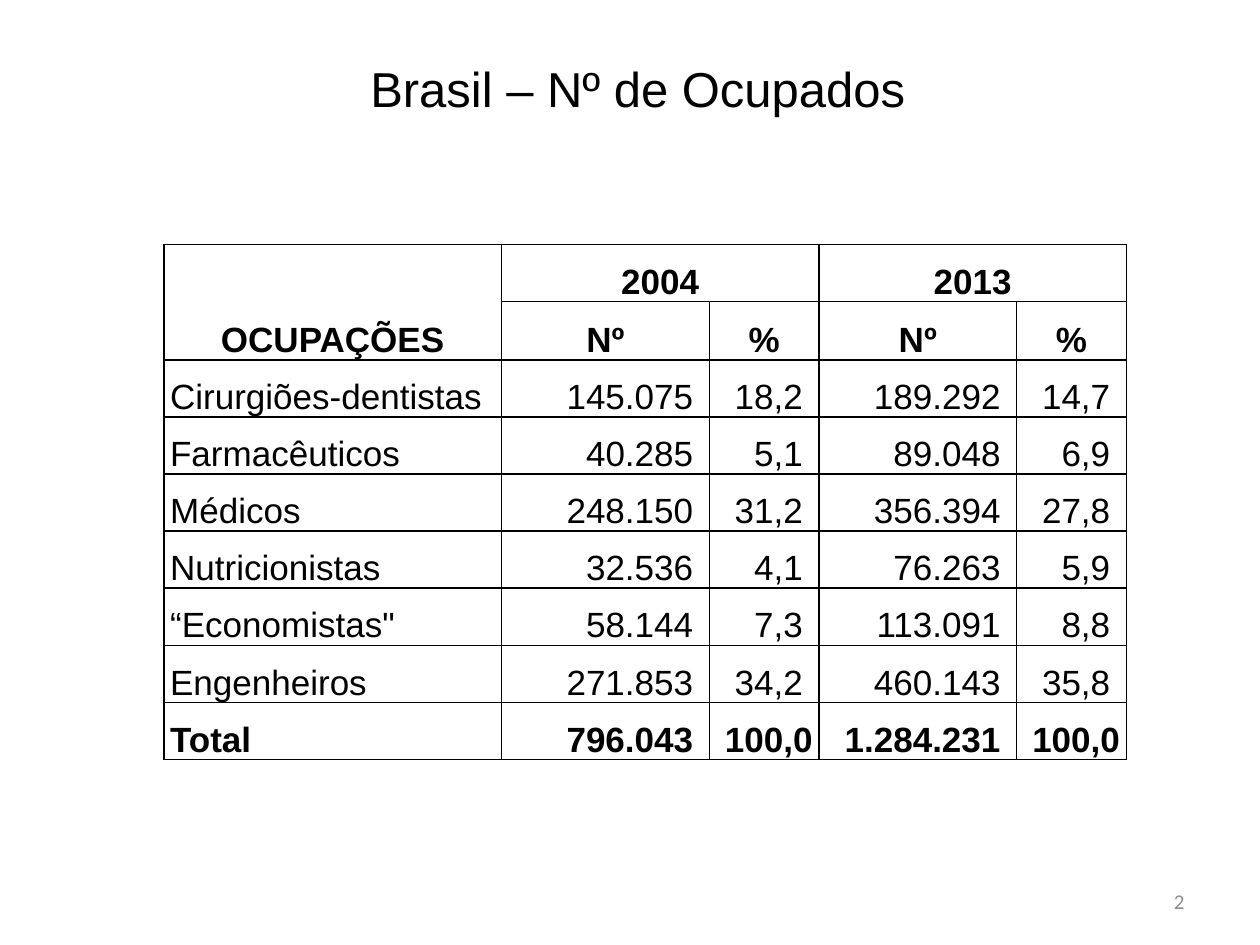
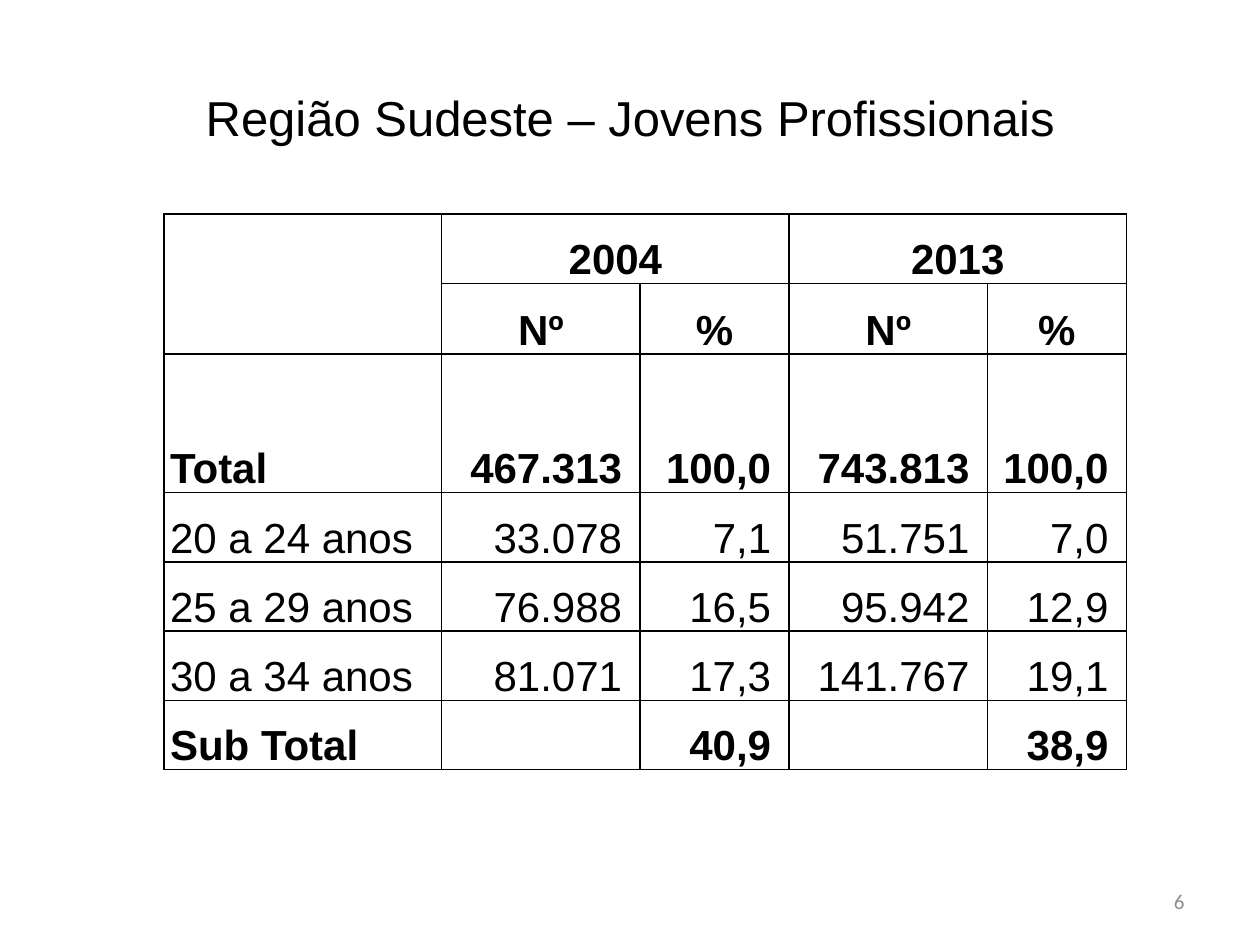
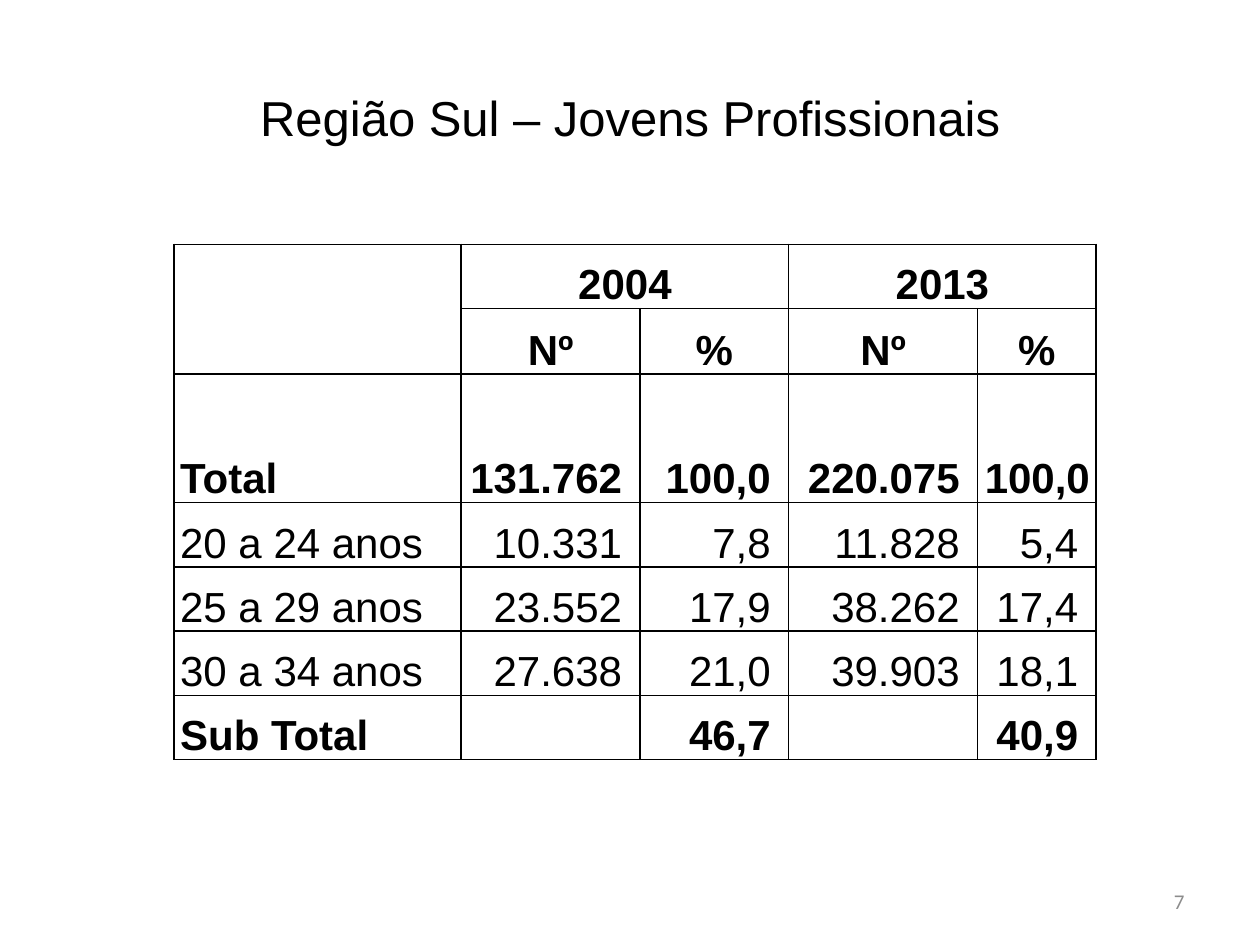
from dataclasses import dataclass

from lxml import etree
from pptx import Presentation
from pptx import util as u
from pptx.dml.color import RGBColor
from pptx.enum import text
from pptx.oxml import ns


@dataclass(frozen=True)
class Theme:
    ink: str = "000000"
    muted: str = "8C8C8C"
    font: str = "Arial"
    number_font: str = "Calibri"
    title_size: int = 28
    number_size: int = 12
    line_spacing: float = 1.07
    border: float = 1


@dataclass(frozen=True)
class Box:
    left: float
    top: float
    width: float
    height: float

    def lengths(self):
        return [grid(n) for n in (self.left, self.top, self.width, self.height)]


THEME = Theme()
SLIDE_WIDTH, SLIDE_HEIGHT = u.Inches(10), u.Inches(7.5)
GRID_COLUMNS = 100
TITLE_BOX = Box(5, 3, 90, 12.5)
NUMBER_BOX = Box(71.7, 69.5, 23.3, 4)
YEARS = ("2004", "2013")
MEASURES = ("Nº", "%")
HEADER_ROWS = 2
OCCUPATION_ROWS = [1, 1.02] + [1] * 7
AGE_ROWS = [1, 1.02, 2] + [1] * 4
LEFT, CENTER, RIGHT = text.PP_ALIGN.LEFT, text.PP_ALIGN.CENTER, text.PP_ALIGN.RIGHT


def grid(count):
    return int(SLIDE_WIDTH * count / GRID_COLUMNS)


def write(text_frame, content, size, alignment, font=THEME.font, color=THEME.ink, bold=False):
    text_frame.text = content
    paragraph = text_frame.paragraphs[0]
    paragraph.alignment = alignment
    for run in paragraph.runs:
        run.font.name = font
        run.font.size = u.Pt(size)
        run.font.bold = bold
        run.font.color.rgb = RGBColor.from_string(color)
    return paragraph


def add_label(slide, box, content, size, alignment, **style):
    text_frame = slide.shapes.add_textbox(*box.lengths()).text_frame
    text_frame.word_wrap = True
    text_frame.vertical_anchor = text.MSO_ANCHOR.MIDDLE
    write(text_frame, content, size, alignment, **style)
    return text_frame


def draw_borders(cell):
    properties = cell._tc.get_or_add_tcPr()
    for side in ("lnL", "lnR", "lnT", "lnB"):
        line = etree.SubElement(properties, ns.qn(f"a:{side}"), w=str(u.Pt(THEME.border)))
        fill = etree.SubElement(line, ns.qn("a:solidFill"))
        etree.SubElement(fill, ns.qn("a:srgbClr"), val=THEME.ink)


def fill_cell(cell, content, size, alignment, bold):
    draw_borders(cell)
    cell.fill.background()
    cell.vertical_anchor = text.MSO_ANCHOR.BOTTOM
    cell.margin_left = cell.margin_right = grid(0.5)
    cell.margin_top = cell.margin_bottom = 0
    if content:
        paragraph = write(cell.text_frame, content, size, alignment, bold=bold)
        paragraph.line_spacing = THEME.line_spacing


def share_out(tracks, name, total, weights):
    for track, weight in zip(tracks, weights):
        setattr(track, name, int(total * weight / sum(weights)))


def add_year_table(slide, box, corner, records, column_weights, row_weights, size):
    years_row = [corner] + [label for year in YEARS for label in (year, "")]
    measures_row = [""] + list(MEASURES) * len(YEARS)
    rows = [years_row, measures_row] + records
    frame = slide.shapes.add_table(len(rows), len(years_row), *box.lengths())
    table = frame.table
    table.first_row = table.horz_banding = False
    share_out(table.columns, "width", grid(box.width), column_weights)
    share_out(table.rows, "height", grid(box.height), row_weights)

    for row, values in enumerate(rows):
        header = row < HEADER_ROWS
        bold = header or "Total" in values[0]
        for column, value in enumerate(values):
            figure = not header and column > 0
            alignment = CENTER if header else RIGHT if figure else LEFT
            content = f"{value} " if figure and value else value
            fill_cell(table.cell(row, column), content, size, alignment, bold)

    table.cell(0, 0).merge(table.cell(1, 0))
    for column in range(1, len(years_row), len(MEASURES)):
        table.cell(0, column).merge(table.cell(0, column + 1))


def add_table_slide(presentation, title, number, **table):
    slide = presentation.slides.add_slide(presentation.slide_layouts[6])
    heading = add_label(slide, TITLE_BOX, title, THEME.title_size, CENTER)
    add_year_table(slide, **table)
    add_label(slide, NUMBER_BOX, number, THEME.number_size, RIGHT,
              font=THEME.number_font, color=THEME.muted)
    return heading


def main():
    presentation = Presentation()
    presentation.slide_width, presentation.slide_height = SLIDE_WIDTH, SLIDE_HEIGHT

    heading = add_table_slide(
        presentation, "Brasil – Nº de Ocupados", "2",
        box=Box(13, 19.4, 76.4, 40.9), corner="OCUPAÇÕES", size=20,
        column_weights=[2.68, 1.65, 0.87, 1.57, 0.87], row_weights=OCCUPATION_ROWS,
        records=[
            ["Cirurgiões-dentistas", "145.075", "18,2", "189.292", "14,7"],
            ["Farmacêuticos", "40.285", "5,1", "89.048", "6,9"],
            ["Médicos", "248.150", "31,2", "356.394", "27,8"],
            ["Nutricionistas", "32.536", "4,1", "76.263", "5,9"],
            ["“Economistas\"", "58.144", "7,3", "113.091", "8,8"],
            ["Engenheiros", "271.853", "34,2", "460.143", "35,8"],
            ["Total", "796.043", "100,0", "1.284.231", "100,0"],
        ])
    heading.margin_left = grid(2.2)
    heading.margin_bottom = grid(5)

    add_table_slide(
        presentation, "Região Sudeste – Jovens Profissionais", "6",
        box=Box(13, 17, 76.4, 44.1), corner="", size=24,
        column_weights=[2.2, 1.57, 1.18, 1.57, 1.1], row_weights=AGE_ROWS,
        records=[
            ["Total", "467.313", "100,0", "743.813", "100,0"],
            ["20 a 24 anos", "33.078", "7,1", "51.751", "7,0"],
            ["25 a 29 anos", "76.988", "16,5", "95.942", "12,9"],
            ["30 a 34 anos", "81.071", "17,3", "141.767", "19,1"],
            ["Sub Total", "", "40,9", "", "38,9"],
        ])

    add_table_slide(
        presentation, "Região Sul – Jovens Profissionais", "7",
        box=Box(13.8, 19.4, 73.2, 40.9), corner="", size=24,
        column_weights=[2.28, 1.42, 1.18, 1.5, 0.94], row_weights=AGE_ROWS,
        records=[
            ["Total", "131.762", "100,0", "220.075", "100,0"],
            ["20 a 24 anos", "10.331", "7,8", "11.828", "5,4"],
            ["25 a 29 anos", "23.552", "17,9", "38.262", "17,4"],
            ["30 a 34 anos", "27.638", "21,0", "39.903", "18,1"],
            ["Sub Total", "", "46,7", "", "40,9"],
        ])

    presentation.save("out.pptx")


if __name__ == "__main__":
    main()
